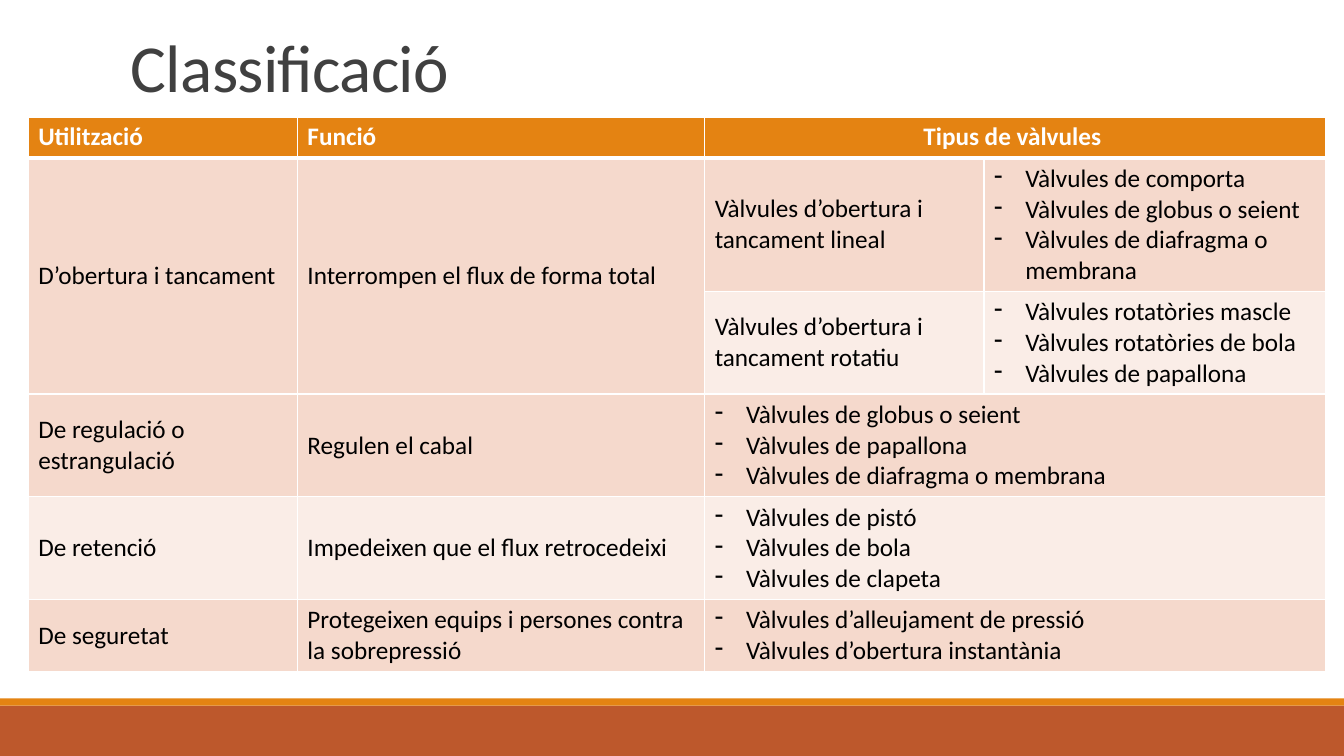
from lxml.etree import SubElement
from pptx import Presentation
from pptx.dml.color import RGBColor
from pptx.enum.shapes import MSO_SHAPE
from pptx.enum.text import MSO_ANCHOR, PP_ALIGN
from pptx.oxml.ns import qn
from pptx.util import Inches, Pt

WHITE = RGBColor(0xFF, 0xFF, 0xFF)
BLACK = RGBColor(0x00, 0x00, 0x00)
CHARCOAL = RGBColor(0x40, 0x40, 0x40)
ORANGE = RGBColor(0xE4, 0x83, 0x12)
RUST = RGBColor(0xBD, 0x58, 0x2C)
PEACH = RGBColor(0xF5, 0xD9, 0xCC)
PALE_PEACH = RGBColor(0xFA, 0xED, 0xE7)

FONT = "Calibri"
SLIDE_WIDTH, SLIDE_HEIGHT = 13.33, 7.5
COLUMN_WIDTHS = [2.67, 4.04, 2.77, 3.39]
ROW_HEIGHTS = [0.41, 1.32, 1.02, 1.02, 1.02, 0.71]
MERGES = [((0, 2), (0, 3)), ((1, 0), (2, 0)), ((1, 1), (2, 1))] + [
    ((row, 2), (row, 3)) for row in (3, 4, 5)
]
ROWS = [
    ["Utilització", "Funció", "Tipus de vàlvules ", ""],
    ["D’obertura i tancament", "Interrompen el flux de forma total",
     "Vàlvules d’obertura i tancament lineal",
     ["Vàlvules de comporta", "Vàlvules de globus o seient",
      "Vàlvules de diafragma o membrana"]],
    ["", "", "Vàlvules d’obertura i tancament rotatiu",
     ["Vàlvules rotatòries mascle", "Vàlvules rotatòries de bola",
      "Vàlvules de papallona"]],
    ["De regulació o estrangulació", "Regulen el cabal",
     ["Vàlvules de globus o seient", "Vàlvules de papallona",
      "Vàlvules de diafragma o membrana"], ""],
    ["De retenció", "Impedeixen que el flux retrocedeixi",
     ["Vàlvules de pistó", "Vàlvules de bola", "Vàlvules de clapeta"], ""],
    ["De seguretat", "Protegeixen equips i persones contra la sobrepressió",
     ["Vàlvules d’alleujament de pressió",
      "Vàlvules d’obertura instantània"], ""],
]
ROW_FILLS = [ORANGE, PEACH, PALE_PEACH, PEACH, PALE_PEACH, PEACH]


def set_font(para, size, color, bold=False):
    """Set the font of a whole paragraph."""
    font = para.font
    font.name, font.size, font.bold = FONT, Pt(size), bold
    font.color.rgb = color


def add_band(page, top, height, color):
    """Add a full-width band at the foot of the slide."""
    band = page.shapes.add_shape(
        MSO_SHAPE.RECTANGLE, 0, Inches(top), Inches(SLIDE_WIDTH), Inches(height))
    band.shadow.inherit = False
    band.fill.solid()
    band.fill.fore_color.rgb = color
    band.line.fill.background()


def add_title(page, text):
    """Add the slide title, resting on the bottom of its box."""
    box = page.shapes.add_textbox(Inches(1.2), Inches(-0.49), Inches(11), Inches(1.59))
    frame = box.text_frame
    frame.word_wrap = True
    frame.vertical_anchor = MSO_ANCHOR.BOTTOM
    para = frame.paragraphs[0]
    para.line_spacing = 0.85
    span = para.add_run()
    span.text = text
    set_font(para, 48, CHARCOAL)
    span.font._element.set("spc", "-50")


def add_dash(para):
    """Give a paragraph a dash bullet with a hanging indent."""
    properties = para._p.get_or_add_pPr()
    properties.set("marL", str(Inches(0.31)))
    properties.set("indent", str(Inches(-0.31)))
    SubElement(properties, qn("a:buFontTx"))
    SubElement(properties, qn("a:buChar"), char="-")


def set_borders(cell, bottom):
    """Draw white cell borders, with the bottom one in its own width."""
    properties = cell._tc.get_or_add_tcPr()
    for side, width in (("L", 1), ("R", 1), ("T", 1), ("B", bottom)):
        line = SubElement(properties, qn(f"a:ln{side}"), w=str(Pt(width)))
        fill = SubElement(line, qn("a:solidFill"))
        SubElement(fill, qn("a:srgbClr"), val=str(WHITE))


def fill_cell(cell, content, color, header):
    """Style a cell and write its text or its dashed list."""
    set_borders(cell, 3 if header else 1)
    cell.fill.solid()
    cell.fill.fore_color.rgb = color
    cell.vertical_anchor = MSO_ANCHOR.TOP if header else MSO_ANCHOR.MIDDLE
    dashed = isinstance(content, list)
    cell.text = "\n".join(content) if dashed else content
    for para in cell.text_frame.paragraphs:
        if dashed:
            add_dash(para)
        set_font(para, 18, WHITE if header else BLACK, header)


def add_valve_table(page):
    """Add the table that classifies the valves."""
    table = page.shapes.add_table(
        len(ROW_HEIGHTS), len(COLUMN_WIDTHS), Inches(0.28), Inches(1.16),
        Inches(sum(COLUMN_WIDTHS)), Inches(sum(ROW_HEIGHTS))).table
    for column, width in zip(table.columns, COLUMN_WIDTHS):
        column.width = Inches(width)
    for row, height in zip(table.rows, ROW_HEIGHTS):
        row.height = Inches(height)
    for index, (row, contents) in enumerate(zip(table.rows, ROWS)):
        for cell, content in zip(row.cells, contents):
            fill_cell(cell, content, ROW_FILLS[index], index == 0)
    for first, last in MERGES:
        table.cell(*first).merge(table.cell(*last))
    table.cell(0, 2).text_frame.paragraphs[0].alignment = PP_ALIGN.CENTER


def main():
    """Build the slide and save the deck."""
    deck = Presentation()
    deck.slide_width, deck.slide_height = Inches(SLIDE_WIDTH), Inches(SLIDE_HEIGHT)
    page = deck.slides.add_slide(deck.slide_layouts[6])
    add_band(page, 7, 0.5, RUST)
    add_band(page, 6.93, 0.07, ORANGE)
    add_title(page, "Classificació")
    add_valve_table(page)
    deck.save("out.pptx")


if __name__ == "__main__":
    main()
